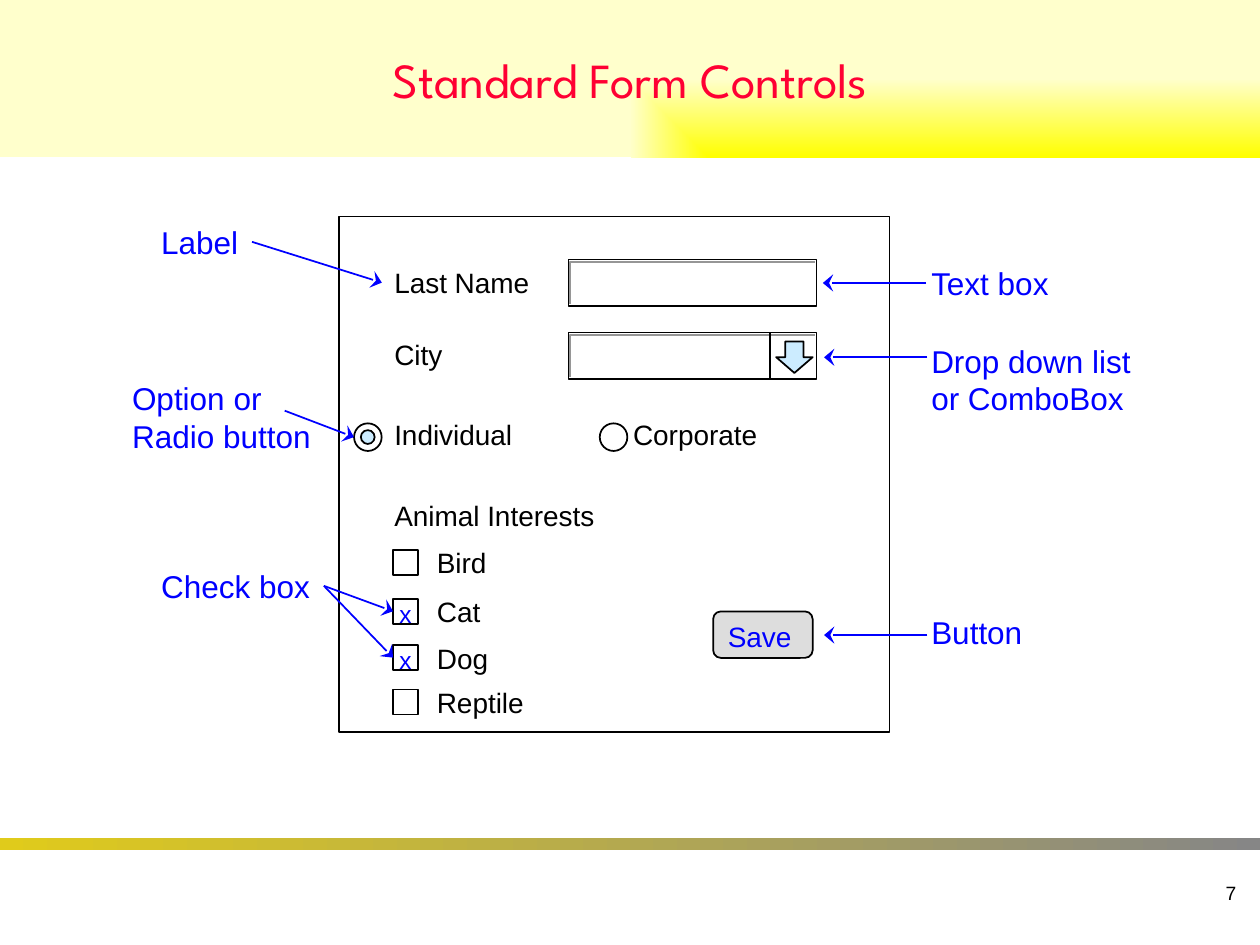
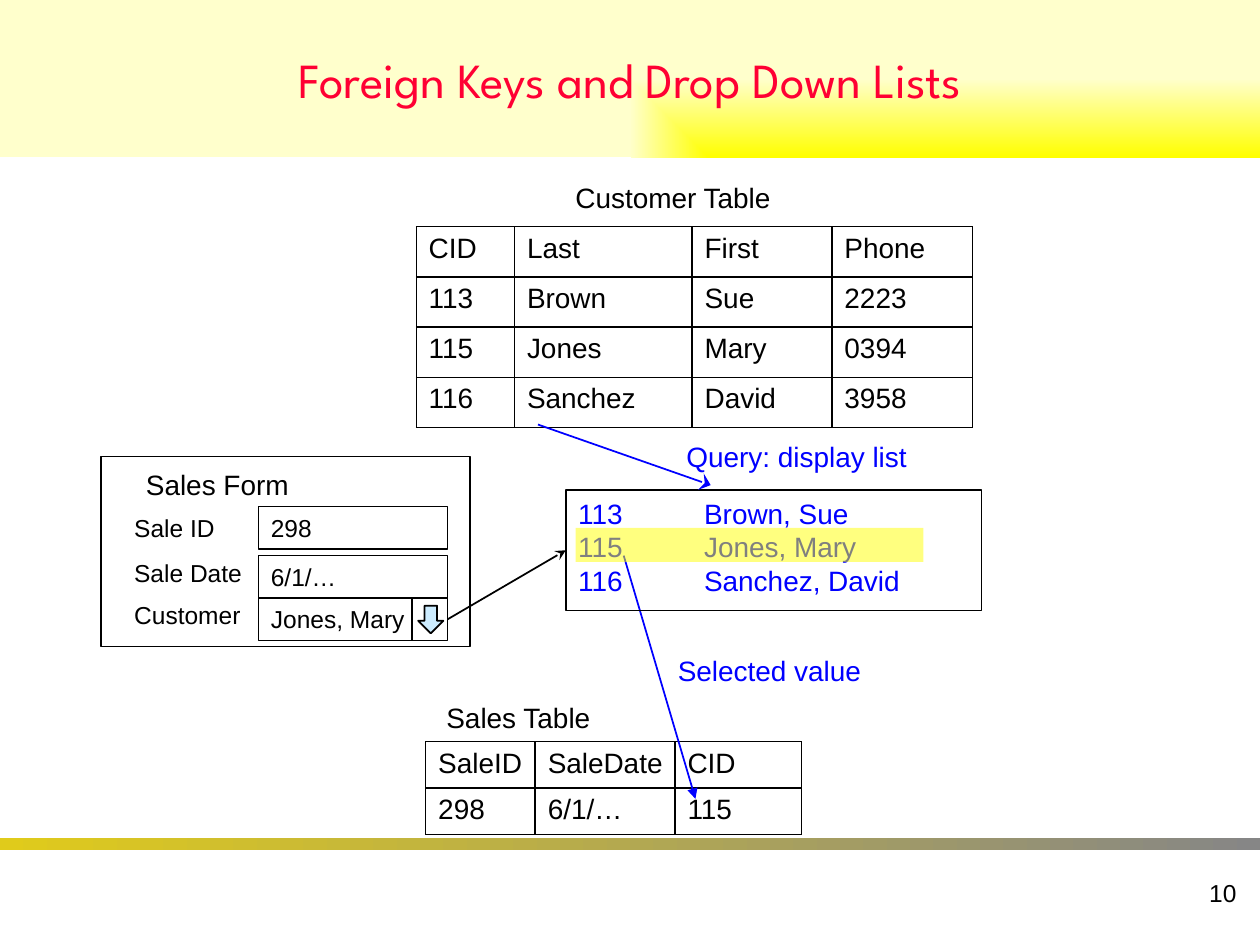
from lxml import etree
from pptx import Presentation
from pptx.dml.color import RGBColor
from pptx.enum.shapes import MSO_CONNECTOR, MSO_SHAPE
from pptx.enum.text import MSO_ANCHOR, PP_ALIGN
from pptx.oxml.ns import qn
from pptx.util import Pt

RECT, ROUNDED = MSO_SHAPE.RECTANGLE, MSO_SHAPE.ROUNDED_RECTANGLE
OVAL, DOWN_ARROW = MSO_SHAPE.OVAL, MSO_SHAPE.DOWN_ARROW
STRAIGHT = MSO_CONNECTOR.STRAIGHT
LEFT, CENTER, RIGHT = PP_ALIGN.LEFT, PP_ALIGN.CENTER, PP_ALIGN.RIGHT
TOP, MIDDLE = MSO_ANCHOR.TOP, MSO_ANCHOR.MIDDLE
LEFT_SIDE, RIGHT_SIDE = 1, 3

COLORS = {
    "black": "000000", "blue": "0000FF", "title": "FF0033",
    "band": "FFFFCC", "yellow": "FFFF00", "gold": "E0CB1B", "gray": "868686",
    "inset": "969696", "icon": "CCECFF", "button": "DDDDDD",
}
BODY_FONT, TITLE_FONT = "Arial", "League Spartan"


def rgb(name):
    return RGBColor.from_string(COLORS[name])


def child(parent, tag, **attrs):
    return etree.SubElement(parent, qn(tag), attrs)


def write(tf, text, size, color="black", font=BODY_FONT, align=LEFT, anchor=TOP,
          wrap=True, **margins):
    tf.text = text
    tf.word_wrap, tf.vertical_anchor = wrap, anchor
    for name, value in margins.items():
        setattr(tf, name, Pt(value))
    for p in tf.paragraphs:
        p.alignment = align
        for r in p.runs:
            r.font.color.rgb = rgb(color)
            for name, value in {"size": Pt(size), "name": font}.items():
                setattr(r.font, name, value)


def set_tab(tf, position):
    for p in tf.paragraphs:
        tabs = child(p._p.get_or_add_pPr(), "a:tabLst")
        child(tabs, "a:tab", pos=str(Pt(position)), algn="l")


def outline(sp, color, width):
    if color:
        sp.line.color.rgb = rgb(color)
        sp.line.width = Pt(width)
    else:
        sp.line.fill.background()


def shape(s, kind, x, y, w, h, fill=None, line="black", width=1):
    sp = s.shapes.add_shape(kind, Pt(x), Pt(y), Pt(w), Pt(h))
    sp.shadow.inherit = False
    if fill:
        sp.fill.solid()
        sp.fill.fore_color.rgb = rgb(fill)
    else:
        sp.fill.background()
    outline(sp, line, width)
    return sp


def label(s, text, x, y, w, size=16, color="black", lines=1):
    """Text box as high as its lines; only a label of several lines wraps."""
    h = 1.2 * size * lines + 7.2
    sp = s.shapes.add_textbox(Pt(x), Pt(y), Pt(w), Pt(h))
    write(sp.text_frame, text, size, color, wrap=lines > 1)
    return sp


def connect(s, begin, end, color="blue", head=None, head_width="med"):
    """Each end is a point (x, y) or a joint (shape, side)."""
    joined = [not isinstance(e[0], (int, float)) for e in (begin, end)]
    points = [(0, 0) if j else e for j, e in zip(joined, (begin, end))]
    c = s.shapes.add_connector(STRAIGHT, *(Pt(v) for pt in points for v in pt))
    if joined[0]:
        c.begin_connect(*begin)
    if joined[1]:
        c.end_connect(*end)
    outline(c, color, 1)
    if head:
        child(c.line._get_or_add_ln(), "a:tailEnd", type=head, w=head_width)
    child(c._element.spPr, "a:effectLst")


def gradient(sp, first, last):
    sp.fill.gradient()
    sp.fill.gradient_angle = 0
    for stop, name in zip(sp.fill.gradient_stops, (first, last)):
        stop.color.rgb = rgb(name)


def toward_corner(sp):
    """Turn a linear gradient into one that starts at the bottom right."""
    grad = sp._element.spPr.find(qn("a:gradFill"))
    grad.remove(grad.find(qn("a:lin")))
    way = child(grad, "a:path", path="rect")
    child(way, "a:fillToRect", l="100000", t="100000")


def add_slide(prs, title, number, number_size):
    s = prs.slides.add_slide(prs.slide_layouts[6])
    rule = shape(s, RECT, 0, 478.8, 720, 7.2, line=None)
    gradient(rule, "gold", "gray")
    band = shape(s, RECT, 0, 0, 720, 90, line=None)
    gradient(band, "yellow", "band")
    toward_corner(band)
    write(band.text_frame, title, 28, "title", TITLE_FONT, CENTER, MIDDLE)
    page = s.shapes.add_textbox(Pt(563.8), Pt(492), Pt(149.8), Pt(36))
    write(page.text_frame, number, number_size, align=RIGHT, anchor=MIDDLE)
    return s


def sunken_field(s, x, y, w=141.8, h=26.6):
    shape(s, RECT, x, y, w, h)
    left, top = x + 0.9, y + 1.4
    fb = s.shapes.build_freeform(Pt(left), Pt(top + 24), scale=1.0)
    fb.add_line_segments([(Pt(left), Pt(top)), (Pt(x + w - 0.7), Pt(top))], close=False)
    edge = fb.convert_to_shape()
    edge.shadow.inherit = False
    edge.fill.background()
    outline(edge, "inset", 1)


def drop_button(s, divider, top, bottom, x, y, w, h):
    connect(s, (divider, top), (divider, bottom), "black")
    shape(s, DOWN_ARROW, x, y, w, h, "icon")


def check_box(s, y, text, w, checked):
    box = shape(s, RECT, 224.6, y, 14.4, 14.4)
    if checked:
        write(box.text_frame, "x", 14, "blue", margin_left=3.6, margin_top=0,
              margin_right=0, margin_bottom=0)
    label(s, text, 242.6, y - 5.8, w)
    return box


def cell_borders(cell, widths):
    """Draw left, right, top and bottom borders in that order."""
    tc_pr = cell._tc.get_or_add_tcPr()
    for i, (side, width) in enumerate(zip("LRTB", widths)):
        ln = etree.Element(qn("a:ln" + side), w=str(Pt(width)))
        child(child(ln, "a:solidFill"), "a:srgbClr", val=COLORS["black"])
        tc_pr.insert(i, ln)


def data_table(s, x, y, col_widths, row_height, rows):
    """Grid with thin outer and thicker inner lines."""
    n, m = len(rows), len(col_widths)
    frame = s.shapes.add_table(n, m, Pt(x), Pt(y), Pt(sum(col_widths)), Pt(row_height * n))
    table = frame.table
    table.first_row = table.horz_banding = False
    for column, w in zip(table.columns, col_widths):
        column.width = Pt(w)
    for i, row in enumerate(rows):
        table.rows[i].height = Pt(row_height)
        for j, text in enumerate(row):
            cell = table.cell(i, j)
            write(cell.text_frame, text, 16)
            cell.margin_right = Pt(2)
            cell.fill.background()
            outer = (j == 0, j == m - 1, i == 0, i == n - 1)
            cell_borders(cell, [0.5 if edge else 1 for edge in outer])


def form_controls(prs):
    s = add_slide(prs, "Standard Form Controls", "7", 11)
    shape(s, RECT, 193.7, 123.8, 314.6, 294.5)
    last_name = label(s, "Last Name", 218.2, 148.3, 92.9)
    label(s, "City", 218.2, 189.4, 42.5)
    for y in (148.3, 190.1):
        sunken_field(s, 324.9, y)
    drop_button(s, 439.9, 190.1, 217.4, 443.5, 195.1, 20.9, 18)

    for x in (202.3, 342.7):
        shape(s, OVAL, x, 241.9, 15.8, 15.8)
    shape(s, OVAL, 206.2, 245.8, 7.9, 7.9, "icon")
    label(s, "Individual", 218.2, 235, 82.8)
    label(s, "Corporate", 354.7, 235, 86.4)

    label(s, "Animal Interests", 218.2, 281.5, 130.3)
    animals = [(314.1, "Bird", 43.2, False), (342.1, "Cat", 39.6, True),
               (368.6, "Dog", 43.9, True), (394, "Reptile", 64.8, False)]
    boxes = [check_box(s, *animal) for animal in animals]
    save = shape(s, ROUNDED, 407.5, 349.4, 56.9, 26.6, "button")
    write(save.text_frame, "Save", 16, "blue")

    notes = [("Label", 85, 123.8, 59, 1),
             ("Option or Radio button", 68.4, 213.1, 125.3, 2),
             ("Check box", 85, 320.4, 100.1, 1),
             ("Text box", 525.1, 147.1, 82.1, 1),
             ("Drop down list or ComboBox", 525.1, 191.7, 141.8, 2),
             ("Button", 525.1, 347, 67, 1)]
    marks = {text: label(s, text, x, y, w, 18, "blue", lines)
             for text, x, y, w, lines in notes}
    check_mark = (marks["Check box"], RIGHT_SIDE)
    arrows = [((marks["Label"], RIGHT_SIDE), (last_name, LEFT_SIDE)),
              ((162.7, 234.7), (202.3, 249.8))]
    arrows += [(check_mark, (box, LEFT_SIDE)) for box in boxes[1:3]]
    arrows += [((x, y), (x - 59, y)) for x, y in
               ((529.2, 161.7), (529.9, 204.2), (529.9, 362.9))]
    for begin, end in arrows:
        connect(s, begin, end, head="stealth", head_width="lg")


def foreign_keys(prs):
    s = add_slide(prs, "Foreign Keys and Drop Down Lists", "10", 14)
    label(s, "Customer Table", 321.8, 99.4, 127.4)
    data_table(s, 237.8, 129.6, (56.2, 101.5, 79.9, 80.6), 28.7, [
        ("CID", "Last", "First", "Phone"),
        ("113", "Brown", "Sue", "2223"),
        ("115", "Jones", "Mary", "0394"),
        ("116", "Sanchez", "David", "3958")])
    label(s, "Sales Table", 248, 396.7, 97.2)
    data_table(s, 243.2, 423.9, (62.6, 79.9, 72), 26.4, [
        ("SaleID", "SaleDate", "CID"),
        ("298", "6/1/…", "115")])
    connect(s, (356.4, 317.5), (397.4, 456.5), head="triangle")
    label(s, "Selected value", 380.2, 370.1, 123.8, color="blue")

    shape(s, RECT, 57.6, 260.8, 210.8, 108.6)
    label(s, "Sales Form", 76.3, 263.5, 97.2)
    form_rows = [("Sale ID", 289.4, 61.2, "298", 289.4),
                 ("Sale Date", 315.4, 76.3, "6/1/…", 317.5),
                 ("Customer", 339.1, 75.6, "Jones, Mary", 341.8)]
    for name, y, w, value, field_y in form_rows:
        label(s, name, 69.6, y, w, 14)
        field = shape(s, RECT, 147.7, field_y, 108, 24.3, width=0.75)
        write(field.text_frame, value, 14)
    drop_button(s, 235.6, 342, 366, 239, 346.1, 14.4, 15.8)

    choices = shape(s, RECT, 323.3, 280, 237.6, 68.9)
    write(choices.text_frame, "113\tBrown, Sue\n115\tJones, Mary\n116\tSanchez, David",
          16, "blue")
    set_tab(choices.text_frame, 72)
    connect(s, (307.4, 242.6), (406.1, 277.2), head="stealth", head_width="lg")
    label(s, "Query: display list", 385.2, 247.7, 141.8, color="blue")
    connect(s, (field, RIGHT_SIDE), (choices, LEFT_SIDE), "black", "stealth")
    highlight = shape(s, RECT, 329, 301.7, 198.7, 19.4, "yellow", None)
    solid = highlight._element.spPr.find(qn("a:solidFill"))
    child(solid[0], "a:alpha", val="50000")


def main():
    prs = Presentation()
    prs.slide_width, prs.slide_height = Pt(720), Pt(540)
    form_controls(prs)
    foreign_keys(prs)
    prs.save("out.pptx")


if __name__ == "__main__":
    main()
